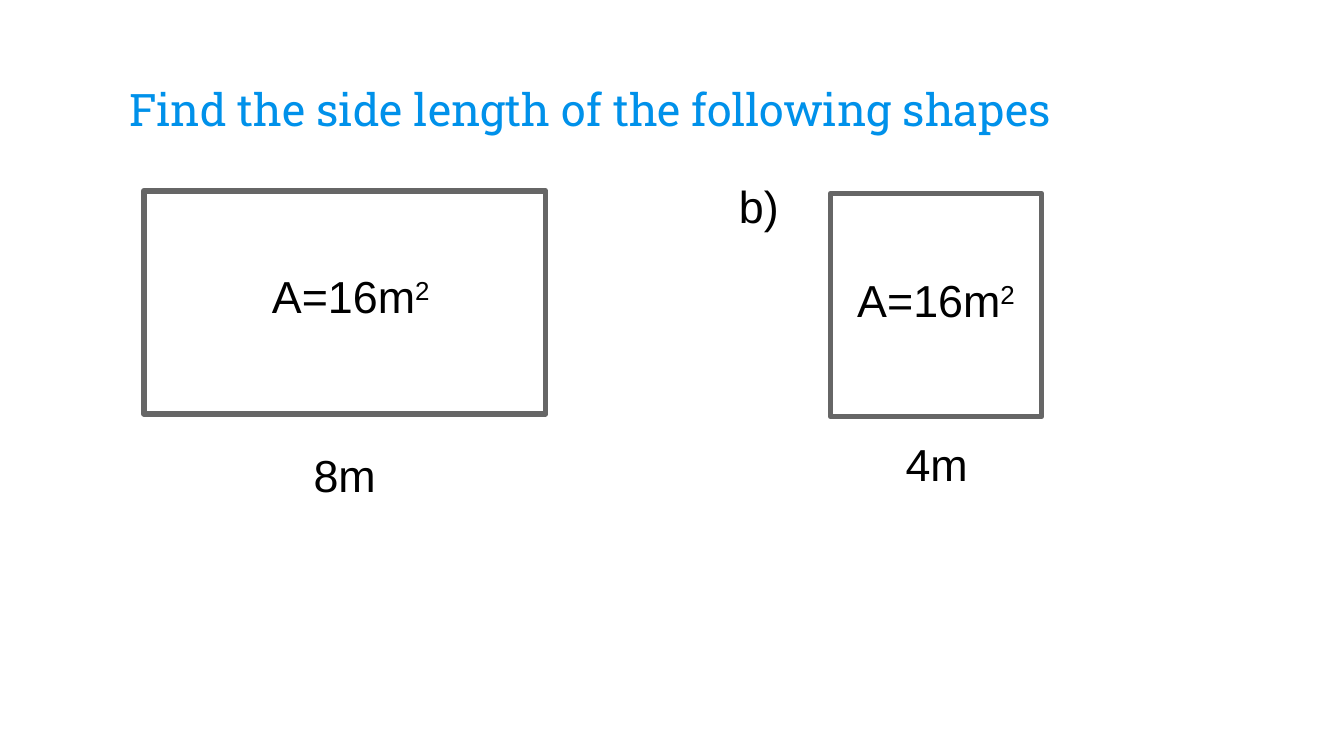
from dataclasses import dataclass

from pptx import Presentation
from pptx.dml.color import RGBColor
from pptx.enum.shapes import MSO_SHAPE as Shape
from pptx.enum.text import MSO_ANCHOR as Anchor, PP_ALIGN as Align
from pptx.util import Inches, Pt

WIDTH = Inches(10)
HEIGHT = WIDTH * 9 // 16
CELL = WIDTH // 100  # square grid: 100 columns across the slide
BLUE, GRAY, BLACK = "0091EA", "666666", "000000"


@dataclass(frozen=True)
class Box:
    column: float
    row: float
    columns: float
    rows: float

    def lengths(self) -> list[int]:
        return [round(n * CELL) for n in (self.column, self.row, self.columns, self.rows)]


@dataclass(frozen=True)
class Label:
    box: Box
    text: str
    superscript: str = ""
    align: Align = Align.CENTER


OUTLINES = [Box(10.7, 14.2, 29.9, 16.6), Box(61.8, 14.4, 15.7, 16.6)]
LABELS = [
    Label(Box(15, 19, 22.2, 7.7), "A=16m", "2"),
    Label(Box(17.8, 32.3, 15.7, 4.9), "8m"),
    Label(Box(54, 12.3, 6.3, 5.8), "b)", align=Align.LEFT),
    Label(Box(61.8, 19.3, 15.7, 7.7), "A=16m", "2"),
    Label(Box(65.5, 31.5, 8.4, 5.8), "4m"),
]


def color(value: str) -> RGBColor:
    return RGBColor.from_string(value)


def write(shape, label: Label, font_name: str, font_color: str, anchor: Anchor) -> None:
    frame = shape.text_frame
    margins = {f"margin_{side}": Inches(0.1) for side in ("left", "top", "right", "bottom")}
    for name, value in {"word_wrap": True, "vertical_anchor": anchor, **margins}.items():
        setattr(frame, name, value)
    paragraph = frame.paragraphs[0]
    paragraph.alignment = label.align
    for text, baseline in ((label.text, 0), (label.superscript, 30)):
        if not text:
            continue
        run = paragraph.add_run()
        run.text = text
        for name, value in {"name": font_name, "size": Pt(24)}.items():
            setattr(run.font, name, value)
        run.font.color.rgb = color(font_color)
        if baseline:
            run.font._element.set("baseline", str(baseline * 1000))


def add_title(slide, label: Label) -> None:
    title = slide.shapes.title
    for name, value in zip(("left", "top", "width", "height"), label.box.lengths()):
        setattr(title, name, value)
    write(title, label, "Roboto Slab", BLUE, Anchor.BOTTOM)


def add_outline(slide, box: Box) -> None:
    rectangle = slide.shapes.add_shape(Shape.RECTANGLE, *box.lengths())
    rectangle.shadow.inherit = False
    rectangle.fill.background()
    rectangle.line.color.rgb = color(GRAY)
    rectangle.line.width = Pt(3)
    line = rectangle.line._get_or_add_ln()
    line.append(line.makeelement(
        "{http://schemas.openxmlformats.org/drawingml/2006/main}round", {}))


def add_label(slide, label: Label) -> None:
    write(slide.shapes.add_textbox(*label.box.lengths()), label, "Arial", BLACK, Anchor.TOP)


def main() -> None:
    presentation = Presentation()
    presentation.slide_width, presentation.slide_height = WIDTH, HEIGHT
    slide = presentation.slides.add_slide(presentation.slide_layouts[5])
    add_title(slide, Label(Box(8.6, 3.4, 82.8, 7.7),
                           "Find the side length of the following shapes", align=Align.LEFT))
    for box in OUTLINES:
        add_outline(slide, box)
    for label in LABELS:
        add_label(slide, label)
    presentation.save("out.pptx")


if __name__ == "__main__":
    main()
